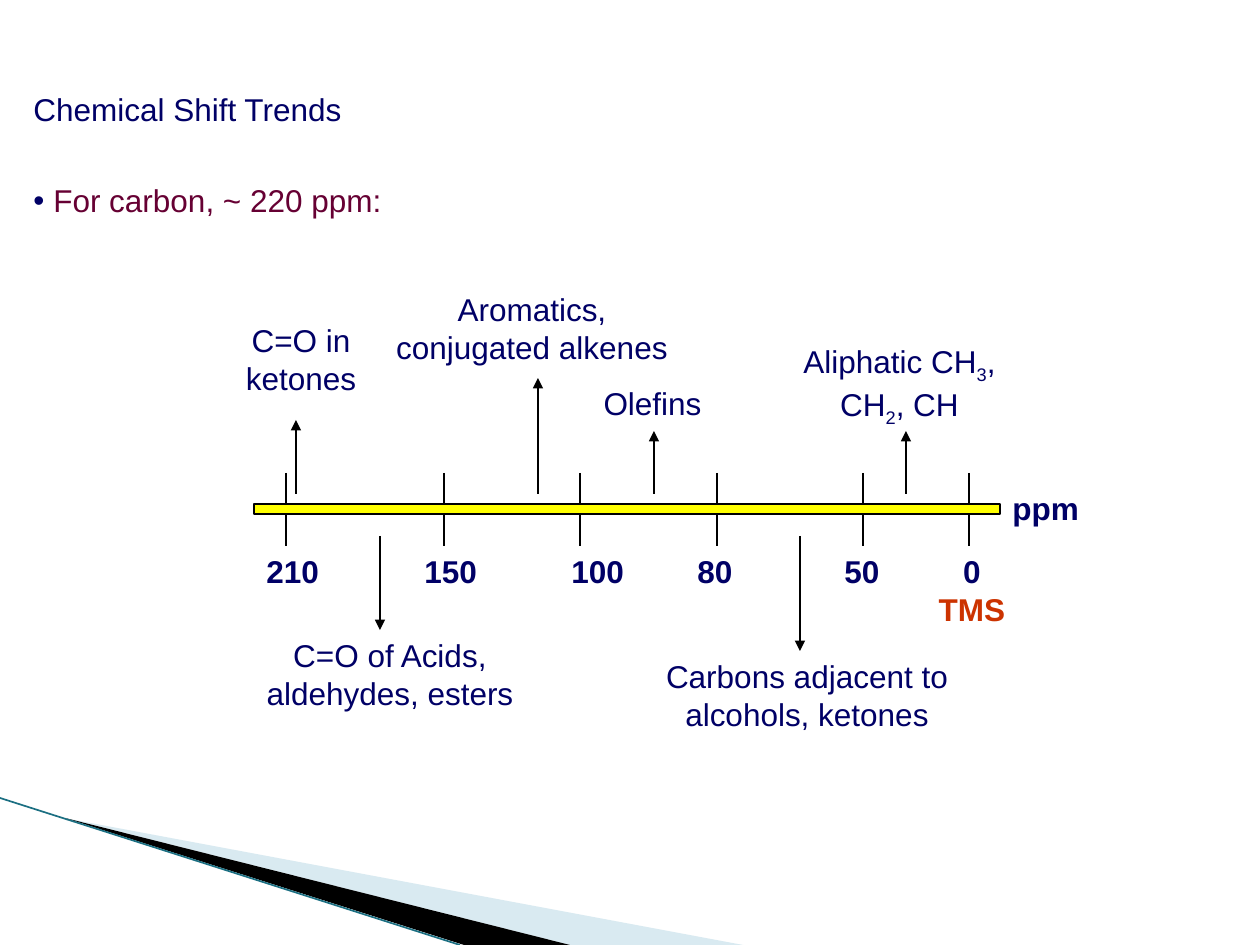
from dataclasses import dataclass

from lxml import etree
from pptx import Presentation
from pptx import util as u
from pptx.dml.color import RGBColor
from pptx.enum import shapes, text
from pptx.oxml.ns import qn
from pptx.slide import Slide

SCALE = 914400 / 126  # EMU per px
WIDTH, HEIGHT = 1260, 945


@dataclass(frozen=True)
class Theme:
    font: str = "Arial"
    size: int = 18
    navy: str = "000066"
    maroon: str = "660033"
    red: str = "CC3300"
    black: str = "000000"
    yellow: str = "FFFF00"
    pale: str = "A0CBDC"
    teal: str = "1B6F82"
    thin: float = 0.75
    edge: float = 0.95
    tick: float = 1.5


THEME = Theme()


@dataclass(frozen=True)
class Label:
    """Each line alternates normal and subscript pieces."""
    x: int
    y: int
    w: int
    lines: tuple[tuple[str, ...], ...]
    bold: bool = False
    centred: bool = True
    colours: tuple[str, ...] = (THEME.navy, THEME.navy)


@dataclass(frozen=True)
class Arrow:
    x: int
    start: int
    end: int


@dataclass(frozen=True)
class Wedge:
    points: tuple[tuple[int, int], ...]
    colour: str
    opacity: int = 100


# Axis geometry
TICK_TOP, TICK_BOTTOM = 473, 546
ABOVE, BELOW = 494, 536
BAR = (254, 504, 746, 10)
LINE_HEIGHT, PADDING = 38, 12
SLACK = 4  # spare room on each side of a centred label, so no line wraps

TICKS = (286, 444, 580, 717, 863, 969)

SCALE_LABELS = (
    Label(254, 546, 78, (("210",),), True, False),
    Label(412, 546, 78, (("150",),), True, False),
    Label(559, 546, 78, (("100",),), True, False),
    Label(685, 546, 60, (("80",),), True, False),
    Label(832, 546, 60, (("50",),), True, False),
    Label(926, 546, 92, (("0",), ("TMS",)), True, True, (THEME.navy, THEME.red)),
    Label(1000, 483, 92, (("ppm",),), True, False),
)

GROUP_LABELS = (
    Label(233, 315, 136, (("C=O in",), ("ketones",))),
    Label(384, 284, 296, (("Aromatics,",), ("conjugated alkenes",))),
    Label(591, 378, 123, (("Olefins",),)),
    Label(790, 336, 219, (("Aliphatic CH", "3", ","), ("CH", "2", ", CH"))),
    Label(254, 630, 272, (("C=O of Acids,",), ("aldehydes, esters",))),
    Label(653, 651, 308, (("Carbons adjacent to",), ("alcohols, ketones",))),
)

ARROWS = (
    Arrow(296, ABOVE, 420), Arrow(538, ABOVE, 378), Arrow(654, ABOVE, 431),
    Arrow(906, ABOVE, 431), Arrow(380, BELOW, 630), Arrow(800, BELOW, 651),
)

WEDGES = (
    Wedge(((69, 819), (743, HEIGHT), (570, HEIGHT)), THEME.pale, 40),
    Wedge(((65, 818), (570, HEIGHT), (464, HEIGHT)), THEME.black),
)


def px(length: float) -> int:
    return round(length * SCALE)


def rgb(colour: str) -> RGBColor:
    return RGBColor.from_string(colour)


def style(font, colour: str, bold: bool = False) -> None:
    font.name = THEME.font
    font.size = u.Pt(THEME.size)
    font.bold = bold
    font.color.rgb = rgb(colour)


def add_text_frame(slide: Slide, x: int, y: int, w: int, h: int):
    frame = slide.shapes.add_textbox(px(x), px(y), px(w), px(h)).text_frame
    frame.word_wrap = False
    frame.auto_size = text.MSO_AUTO_SIZE.SHAPE_TO_FIT_TEXT
    return frame


def draw_label(slide: Slide, label: Label) -> None:
    height = LINE_HEIGHT * len(label.lines) + PADDING
    slack = SLACK if label.centred else 0
    frame = add_text_frame(slide, label.x - slack, label.y, label.w + 2 * slack, height)
    frame.text = "\n".join(line[0] for line in label.lines)
    for paragraph, line, colour in zip(frame.paragraphs, label.lines, label.colours):
        if label.centred:
            paragraph.alignment = text.PP_ALIGN.CENTER
        for piece in line[1:]:
            paragraph.add_run().text = piece
        for index, run in enumerate(paragraph.runs):
            style(run.font, colour, label.bold)
            if index % 2:
                run.font._element.set("baseline", "-25000")


def draw_line(slide: Slide, start: tuple[int, int], end: tuple[int, int],
              colour: str, weight: float, head: bool = False) -> None:
    line = slide.shapes.add_connector(
        shapes.MSO_CONNECTOR.STRAIGHT, *map(px, start + end))
    line.line.color.rgb = rgb(colour)
    line.line.width = u.Pt(weight)
    if head:
        etree.SubElement(line.line._get_or_add_ln(), qn("a:tailEnd"), type="triangle")
    etree.SubElement(line._element.spPr, qn("a:effectLst"))


def draw_wedge(slide: Slide, wedge: Wedge) -> None:
    builder = slide.shapes.build_freeform(*wedge.points[0], scale=SCALE)
    builder.add_line_segments(wedge.points[1:], close=True)
    shape = builder.convert_to_shape()
    shape.shadow.inherit = False
    shape.fill.solid()
    shape.fill.fore_color.rgb = rgb(wedge.colour)
    shape.line.fill.background()
    if wedge.opacity < 100:
        fill = shape._element.spPr.find(f"{qn('a:solidFill')}/{qn('a:srgbClr')}")
        etree.SubElement(fill, qn("a:alpha"), val=str(wedge.opacity * 1000))


def draw_heading(slide: Slide) -> None:
    frame = add_text_frame(slide, 21, 84, 438, 154)
    frame.text = "Chemical Shift Trends\nFor carbon, ~ 220 ppm:"
    title, bullet = frame.paragraphs
    style(title.runs[0].font, THEME.navy)
    props = bullet._p.get_or_add_pPr()
    props.set("marL", str(px(20)))
    props.set("indent", str(-px(20)))
    bullet.space_before = u.Pt(30.5)
    bullet_colour = etree.SubElement(props, qn("a:buClr"))
    etree.SubElement(bullet_colour, qn("a:srgbClr"), val=THEME.navy)
    etree.SubElement(props, qn("a:buFont"), typeface=THEME.font)
    etree.SubElement(props, qn("a:buChar"), char="•")
    style(bullet.runs[0].font, THEME.maroon)


def draw_bar(slide: Slide) -> None:
    bar = slide.shapes.add_shape(shapes.MSO_SHAPE.RECTANGLE, *map(px, BAR))
    bar.shadow.inherit = False
    bar.fill.solid()
    bar.fill.fore_color.rgb = rgb(THEME.yellow)
    bar.line.color.rgb = rgb(THEME.black)
    bar.line.width = u.Pt(THEME.thin)


def main() -> None:
    deck = Presentation()
    deck.slide_width, deck.slide_height = px(WIDTH), px(HEIGHT)
    slide = deck.slides.add_slide(deck.slide_layouts[6])

    # Corner decoration
    for wedge in WEDGES:
        draw_wedge(slide, wedge)
    draw_line(slide, (0, 798), (460, HEIGHT), THEME.teal, THEME.edge)

    # Heading, then the shift scale
    draw_heading(slide)
    for x in TICKS:
        draw_line(slide, (x, TICK_TOP), (x, TICK_BOTTOM), THEME.black, THEME.tick)
    for label in SCALE_LABELS + GROUP_LABELS:
        draw_label(slide, label)
    for arrow in ARROWS:
        draw_line(slide, (arrow.x, arrow.start), (arrow.x, arrow.end),
                  THEME.black, THEME.thin, head=True)
    draw_bar(slide)

    deck.save("out.pptx")


if __name__ == "__main__":
    main()
